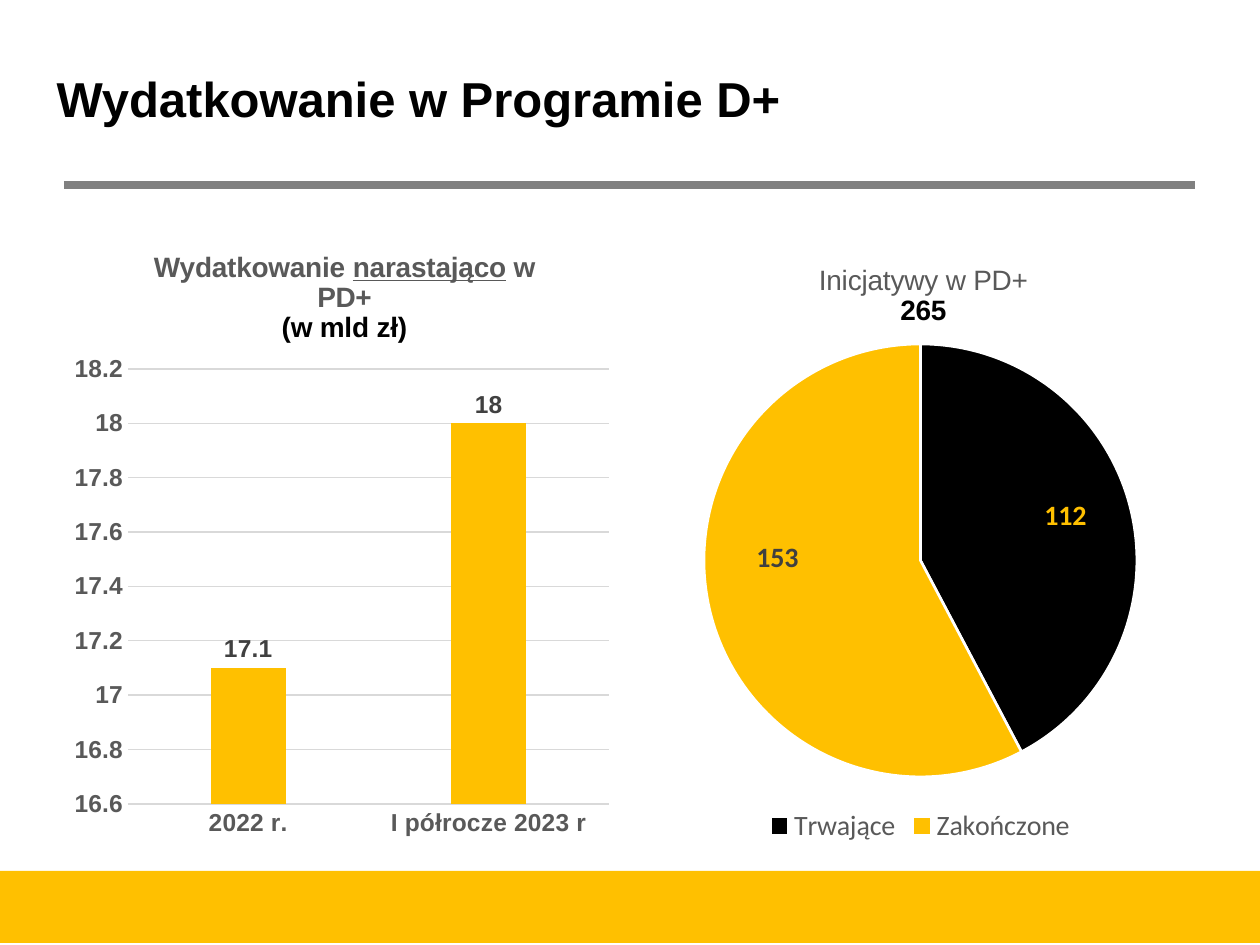
from dataclasses import dataclass

from lxml.etree import SubElement
from pptx import Presentation
from pptx.chart.data import CategoryChartData
from pptx.dml.color import RGBColor
from pptx.enum.chart import XL_CHART_TYPE as ChartType
from pptx.enum.chart import XL_LABEL_POSITION as LabelPosition
from pptx.enum.chart import XL_LEGEND_POSITION as LegendPosition
from pptx.enum.chart import XL_TICK_MARK as TickMark
from pptx.enum.shapes import MSO_CONNECTOR as Connector
from pptx.enum.shapes import MSO_SHAPE as ShapeType
from pptx.enum.text import MSO_ANCHOR as Anchor
from pptx.enum.text import MSO_AUTO_SIZE as AutoSize
from pptx.enum.text import PP_ALIGN as Align
from pptx.oxml.ns import qn
from pptx.util import Emu, Pt

EMU_PER_PX = 914400 / 126
YELLOW, BLACK, GRAY, DARK, GRID = "FFC000", "000000", "595959", "404040", "D9D9D9"


@dataclass(frozen=True)
class Box:
    left: int
    top: int
    width: int
    height: int


@dataclass(frozen=True)
class TitleRun:
    text: str
    color: str = GRAY
    bold: bool = True
    underline: bool = False


@dataclass(frozen=True)
class ChartSpec:
    kind: ChartType
    box: Box
    plot: Box
    title_left: int
    title_top: int
    title: tuple[tuple[TitleRun, ...], ...]
    categories: tuple[str, ...]
    values: tuple[float, ...]


COLUMNS = ChartSpec(
    ChartType.COLUMN_CLUSTERED, Box(63, 220, 557, 629), Box(128, 369, 481, 435), 150, 246,
    ((TitleRun("Wydatkowanie "), TitleRun("narastająco", underline=True), TitleRun(" w PD+")),
     (TitleRun("(w mld zł)", BLACK),)),
    ("2022 r.", "I półrocze 2023 r"), (17.1, 18))
PIE = ChartSpec(
    ChartType.PIE, Box(630, 234, 581, 615), Box(704, 344, 433, 433), 815, 259,
    ((TitleRun("Inicjatywy w PD+", bold=False),), (TitleRun("265", BLACK),)),
    ("Trwające", "Zakończone"), (112, 153))


def px(length: int) -> Emu:
    return Emu(round(length * EMU_PER_PX))


def rgb(color: str) -> RGBColor:
    return RGBColor.from_string(color)


def placed(box: Box) -> tuple[Emu, ...]:
    return px(box.left), px(box.top), px(box.width), px(box.height)


def set_font(font, size: int, color: str, bold: bool = False, name: str = "Arial") -> None:
    font.name, font.size, font.bold = name, Pt(size), bold
    font.color.rgb = rgb(color)


def set_layout(parent, index: int, settings: dict[str, str | float]) -> None:
    for layout in parent.findall(qn("c:layout")):
        parent.remove(layout)
    layout = SubElement(parent, qn("c:layout"))
    manual = SubElement(layout, qn("c:manualLayout"))
    for tag, value in settings.items():
        SubElement(manual, qn(f"c:{tag}")).set("val", str(value))
    parent.insert(index, layout)


def add_chart(slide, spec: ChartSpec):
    data = CategoryChartData()
    data.categories = spec.categories
    data.add_series("Series 1", spec.values)
    chart = slide.shapes.add_chart(spec.kind, *placed(spec.box), data).chart
    set_font(chart.font, 10, BLACK, name="Calibri")
    frame = chart.chart_title.text_frame
    for number, runs in enumerate(spec.title):
        paragraph = frame.add_paragraph() if number else frame.paragraphs[0]
        paragraph.alignment = Align.CENTER
        for item in runs:
            run = paragraph.add_run()
            run.text = item.text
            set_font(run.font, 16, item.color, item.bold)
            run.font.underline = item.underline
    chart.chart_title.include_in_layout = False
    box, plot = spec.box, spec.plot
    edges = {"xMode": "edge", "yMode": "edge"}
    set_layout(chart.chart_title._element, 1, edges | {
        "x": round((spec.title_left - box.left) / box.width, 4),
        "y": round((spec.title_top - box.top) / box.height, 4)})
    set_layout(chart._chartSpace.chart.plotArea, 0, {"layoutTarget": "inner"} | edges | {
        "x": round((plot.left - box.left) / box.width, 4),
        "y": round((plot.top - box.top) / box.height, 4),
        "w": round(plot.width / box.width, 4),
        "h": round(plot.height / box.height, 4)})
    return chart


def add_column_chart(slide, spec: ChartSpec) -> None:
    chart = add_chart(slide, spec)
    chart.has_legend = False
    plot = chart.plots[0]
    plot.vary_by_categories = False
    plot.gap_width, plot.overlap = 219, -27
    series = plot.series[0]
    series.format.fill.solid()
    series.format.fill.fore_color.rgb = rgb(YELLOW)
    labels = series.data_labels
    labels.show_value = True
    labels.position = LabelPosition.OUTSIDE_END
    set_font(labels.font, 14, DARK, True)
    for axis in (chart.category_axis, chart.value_axis):
        axis.major_tick_mark = axis.minor_tick_mark = TickMark.NONE
        set_font(axis.tick_labels.font, 14, GRAY, True)
    values = chart.value_axis
    values.minimum_scale, values.maximum_scale, values.major_unit = 16.6, 18.2, 0.2
    values.format.line.fill.background()
    for line in (chart.category_axis.format.line, values.major_gridlines.format.line):
        line.color.rgb = rgb(GRID)
        line.width = Pt(0.75)


def add_pie_chart(slide, spec: ChartSpec) -> None:
    chart = add_chart(slide, spec)
    chart.has_legend = True
    chart.legend.position = LegendPosition.BOTTOM
    chart.legend.include_in_layout = False
    set_font(chart.legend.font, 16, GRAY, name="Calibri")
    plot = chart.plots[0]
    plot.vary_by_categories = True
    series = plot.series[0]
    series.data_labels.show_value = True
    series.data_labels.show_percentage = False
    styles = ((BLACK, YELLOW, 40, -18), (YELLOW, DARK, -38, -28))
    for number, (fill, color, shift_x, shift_y) in enumerate(styles):
        point = series.points[number]
        point.format.fill.solid()
        point.format.fill.fore_color.rgb = rgb(fill)
        point.format.line.color.rgb = rgb("FFFFFF")
        point.format.line.width = Pt(1.5)
        set_font(point.data_label.font, 16, color, True, "Calibri")
        point.data_label.position = LabelPosition.CENTER
        label = series._element.findall(f"{qn('c:dLbls')}/{qn('c:dLbl')}")[number]
        set_layout(label, 1, {"x": round(shift_x / spec.box.width, 4),
                              "y": round(shift_y / spec.box.height, 4)})


def add_title(slide, text: str, box: Box) -> None:
    title = slide.shapes.title
    title.left, title.top, title.width, title.height = placed(box)
    frame = title.text_frame
    frame.text = text
    frame.word_wrap, frame.auto_size = True, AutoSize.NONE
    frame.vertical_anchor, frame.margin_top = Anchor.TOP, px(13)
    paragraph = frame.paragraphs[0]
    paragraph.alignment = Align.LEFT
    set_font(paragraph.font, 28, BLACK, True)


def add_rule(slide, left: int, right: int, y: int) -> None:
    rule = slide.shapes.add_connector(Connector.STRAIGHT, px(left), px(y), px(right), px(y))
    rule.line.color.rgb = rgb("808080")
    rule.line.width = Pt(4.5)
    SubElement(rule._element.spPr, qn("a:effectLst"))


def add_band(slide, box: Box) -> None:
    band = slide.shapes.add_shape(ShapeType.RECTANGLE, *placed(box))
    band.shadow.inherit = False
    band.fill.solid()
    band.fill.fore_color.rgb = rgb(YELLOW)
    band.line.fill.background()


def main() -> None:
    presentation = Presentation()
    presentation.slide_width, presentation.slide_height = px(1260), px(945)
    slide = presentation.slides.add_slide(presentation.slide_layouts[5])
    add_rule(slide, 64, 1195, 185)
    add_band(slide, Box(0, 871, 1260, 72))
    add_title(slide, "Wydatkowanie w Programie D+", Box(44, 55, 1012, 129))
    add_column_chart(slide, COLUMNS)
    add_pie_chart(slide, PIE)
    presentation.save("out.pptx")


if __name__ == "__main__":
    main()
